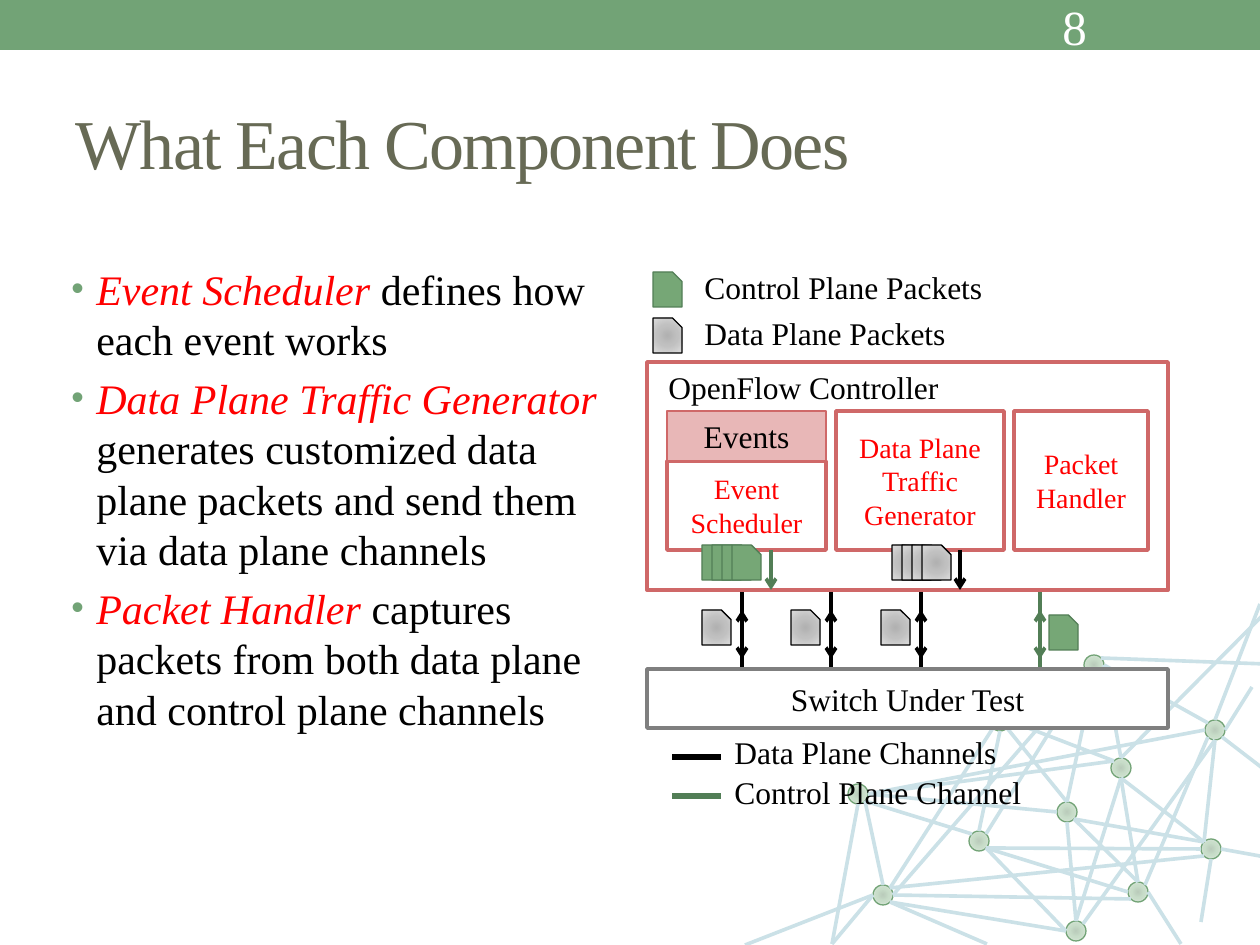
from lxml.etree import SubElement
from pptx import Presentation
from pptx.dml.color import RGBColor
from pptx.enum.shapes import MSO_CONNECTOR, MSO_SHAPE
from pptx.enum.text import MSO_ANCHOR, PP_ALIGN
from pptx.oxml.ns import qn
from pptx.util import Emu, Pt

PX = 914400 / 126
FONT = "Times New Roman"
BLACK = RGBColor(0, 0, 0)
WHITE = RGBColor(255, 255, 255)
RED = RGBColor(255, 0, 0)
OLIVE = RGBColor(0x67, 0x6A, 0x55)
GREEN = RGBColor(0x72, 0xA3, 0x76)
PACKET_GREEN = RGBColor(0x76, 0xA7, 0x76)
DARK_GREEN = RGBColor(0x52, 0x7E, 0x56)
ROSE = RGBColor(0xCF, 0x68, 0x68)
PINK = RGBColor(0xE8, 0xB7, 0xB7)
GREY = RGBColor(0x7F, 0x7F, 0x7F)
PALE_BLUE = RGBColor(0xCB, 0xE1, 0xE7)
# Gradients: (position in percent, colour)
NODE_FILL = [(0, RGBColor(0xBA, 0xCC, 0xBB)), (45, RGBColor(0xC8, 0xDD, 0xC9)),
             (100, RGBColor(0xE1, 0xEC, 0xE1))]
PACKET_GREY = [(0, RGBColor(0xB1, 0xB1, 0xB1)), (45, RGBColor(0xC0, 0xC0, 0xC0)),
               (100, RGBColor(0xDD, 0xDD, 0xDD))]
DATA, CONTROL = (PACKET_GREY, BLACK), (PACKET_GREEN, DARK_GREEN)

TITLE = "What Each Component Does"
BULLETS = [
    ("Event Scheduler ", "defines how each event works"),
    ("Data Plane Traffic Generator ",
     "generates customized data plane packets and send them via data plane channels"),
    ("Packet Handler ", "captures packets from both data plane and control plane channels"),
]
# Text, place, fill, line, line width, text size, text colour
BOXES = [
    ("", (647, 362, 521, 228), WHITE, ROSE, 2.08, 18, BLACK),
    ("Event Scheduler", (667, 461, 159, 89), WHITE, ROSE, 2.08, 16, RED),
    ("Events", (667, 411, 159, 50), PINK, ROSE, 0.75, 18, BLACK),
    ("Packet Handler", (1014, 411, 134, 139), WHITE, ROSE, 2.08, 16, RED),
    ("Data Plane Traffic Generator", (836, 411, 168, 139), WHITE, ROSE, 2.08, 16, RED),
    ("Switch Under Test", (647, 669, 521, 59), WHITE, GREY, 2.08, 18, BLACK),
]
LABELS = [
    ("OpenFlow Controller", 656, 362), ("Control Plane Packets", 692, 262),
    ("Data Plane Packets", 692, 308), ("Data Plane Channels", 722, 727),
    ("Control Plane Channel", 722, 767),
]
CHANNELS = [(742, BLACK), (831, BLACK), (921, BLACK), (1040, DARK_GREEN)]
PACKETS = [(653, 272, CONTROL), (653, 318, DATA), (702, 610, DATA), (791, 610, DATA),
           (881, 610, DATA), (1049, 615, CONTROL)]
QUEUES = [(702, 771, CONTROL), (892, 960, DATA)]  # first packet, arrow, style
LEGEND_LINES = [(757, BLACK), (796, DARK_GREEN)]

NODES = dict(A=(1000, 721), B=(1094, 665), C=(858, 794), D=(1121, 768), E=(1215, 730),
             F=(979, 841), G=(1067, 812), H=(883, 895), I=(1211, 849), J=(1138, 892),
             K=(1076, 931))
RADIUS = 10
SITES = dict(n=(0, -10), ne=(7, -7), e=(10, 0), se=(7, 7),
             s=(0, 10), sw=(-7, 7), w=(-10, 0), nw=(-7, -7))
# Node letter followed by the compass point where the edge meets its circle
INNER_EDGES = """Be-Enw Be-Dn Bs-Gn Bsw-Fne Bsw-He Asw-Hne Cse-Hn Ae-Dnw Ase-Gn As-Fn
    Cse-Fnw Ce-Gw Ce-Dnw Ce-Ew He-Jsw Fse-Jw Gse-Jn Ds-Jn Esw-Jne Hne-Isw Fse-Iw
    Gse-Inw Ds-Inw Es-Inw Hse-Kw Fse-Kw Gs-Kn Ds-Kn Es-Kne""".split()
OUTER_EDGES = [
    ("Ese", (1274, 777)), ("Ie", (1293, 862)), ("Is", (1201, 922)), ("Je", (1181, 944)),
    ("Hse", (987, 944)), ("Cs", (832, 944)), ("Hw", (832, 944)), ("Bne", (1293, 665)),
    ("Ee", (1252, 687)), ("Hw", (745, 945)), ("En", (1260, 604)), ("Dn", (1274, 604)),
]


def px(*lengths):
    return [Emu(round(length * PX)) for length in lengths]


def set_all(target, **values):
    for name, value in values.items():
        setattr(target, name, value)


def add_span(para, text, size, color, italic=False):
    span = para.add_run()
    span.text = text
    set_all(span.font, name=FONT, size=Pt(size), italic=italic)
    span.font.color.rgb = color
    return span


def add_text(slide, place, text, size, color, anchor=MSO_ANCHOR.TOP):
    frame = slide.shapes.add_textbox(*px(*place)).text_frame
    set_all(frame, word_wrap=True, vertical_anchor=anchor)
    if text:
        add_span(frame.paragraphs[0], text, size, color)
    return frame


def fill_radial(shape, stops):
    gradient = SubElement(shape._element.spPr, qn("a:gradFill"), rotWithShape="1")
    stop_list = SubElement(gradient, qn("a:gsLst"))
    for position, color in stops:
        stop = SubElement(stop_list, qn("a:gs"), pos=str(position * 1000))
        SubElement(stop, qn("a:srgbClr"), val=str(color))
    circle = SubElement(gradient, qn("a:path"))
    circle.set("path", "circle")
    SubElement(circle, qn("a:fillToRect"), {side: "100000" for side in "ltrb"})


def add_shape(slide, kind, place, fill, line=None, width=0.75, adjust=None):
    shape = slide.shapes.add_shape(kind, *px(*place))
    if isinstance(fill, list):
        fill_radial(shape, fill)
    else:
        shape.fill.solid()
        shape.fill.fore_color.rgb = fill
    if line is None:
        shape.line.fill.background()
    else:
        shape.line.color.rgb = line
        shape.line.width = Pt(width)
    shape.shadow.inherit = False
    if adjust is not None:
        shape.adjustments[0] = adjust
    return shape


def add_line(slide, start, end, color, width=2.08, arrows=()):
    """Draw a line; arrows may name headEnd (start) and tailEnd (end)."""
    line = slide.shapes.add_connector(MSO_CONNECTOR.STRAIGHT, *px(*start, *end))
    line.line.color.rgb = color
    line.line.width = Pt(width)
    for tip in arrows:
        SubElement(line.line._get_or_add_ln(), qn("a:" + tip), type="arrow")
    SubElement(line._element.spPr, qn("a:effectLst"))


def add_packet(slide, left, top, style):
    add_shape(slide, MSO_SHAPE.SNIP_1_RECTANGLE, (left, top, 29, 35), *style, adjust=0.332)


def edge_end(end):
    if isinstance(end, tuple):
        return end
    return tuple(map(sum, zip(NODES[end[0]], SITES[end[1:]])))


def draw_background(slide):
    add_shape(slide, MSO_SHAPE.RECTANGLE, (0, 0, 1260, 50), GREEN)
    for x, y in NODES.values():
        place = (x - RADIUS, y - RADIUS, 2 * RADIUS, 2 * RADIUS)
        add_shape(slide, MSO_SHAPE.OVAL, place, NODE_FILL, GREEN)
    for start, end in [edge.split("-") for edge in INNER_EDGES] + OUTER_EDGES:
        add_line(slide, edge_end(start), edge_end(end), PALE_BLUE)


def write_text(slide):
    title = slide.shapes.title
    set_all(title, **dict(zip(("left", "top", "width", "height"), px(63, 73, 1134, 136))))
    title.text_frame.vertical_anchor = MSO_ANCHOR.MIDDLE
    para = title.text_frame.paragraphs[0]
    para.alignment = PP_ALIGN.LEFT
    add_span(para, TITLE, 40, OLIVE).font._element.set("spc", "-100")

    frame = add_text(slide, (59, 257, 582, 627), "", 24, BLACK)
    for index, (term, meaning) in enumerate(BULLETS):
        para = frame.add_paragraph() if index else frame.paragraphs[0]
        para.space_before = Pt(4.8)
        props = para._p.get_or_add_pPr()
        indent = px(25)[0]
        props.set("marL", str(indent))
        props.set("indent", str(-indent))
        SubElement(SubElement(props, qn("a:buClr")), qn("a:srgbClr"), val=str(GREEN))
        SubElement(props, qn("a:buSzPct"), val="85000")
        SubElement(props, qn("a:buFont"), typeface="Arial")
        SubElement(props, qn("a:buChar"), char="•")
        add_span(para, term, 24, RED, italic=True)
        add_span(para, meaning, 24, BLACK)
    add_text(slide, (1050, 3, 147, 45), "8", 28, WHITE, MSO_ANCHOR.MIDDLE)


def draw_diagram(slide):
    for x, color in CHANNELS:
        add_line(slide, (x, 570), (x, 709), color)
    for text, place, fill, line, width, size, color in BOXES:
        box = add_shape(slide, MSO_SHAPE.ROUNDED_RECTANGLE, place, fill, line, width, 0)
        if text:
            box.text_frame.vertical_anchor = MSO_ANCHOR.MIDDLE
            para = box.text_frame.paragraphs[0]
            para.alignment = PP_ALIGN.CENTER
            add_span(para, text, size, color)
    for text, left, top in LABELS:
        add_text(slide, (left, top, 328, 50), text, 18, BLACK)
    for y, color in LEGEND_LINES:
        add_line(slide, (721, y), (672, y), color, 3)
    for left, top, style in PACKETS:
        add_packet(slide, left, top, style)
    for left, arrow_x, style in QUEUES:
        for step in range(4):
            add_packet(slide, left + 10 * step, 545, style)
        add_line(slide, (arrow_x, 550), (arrow_x, 590), style[1], arrows=["tailEnd"])
    for x, color in CHANNELS:
        add_line(slide, (x, 610), (x, 659), color, arrows=["headEnd", "tailEnd"])


def main():
    deck = Presentation()
    deck.slide_width, deck.slide_height = px(1260, 945)
    slide = deck.slides.add_slide(deck.slide_layouts[5])
    draw_background(slide)
    write_text(slide)
    draw_diagram(slide)
    deck.save("out.pptx")


if __name__ == "__main__":
    main()
